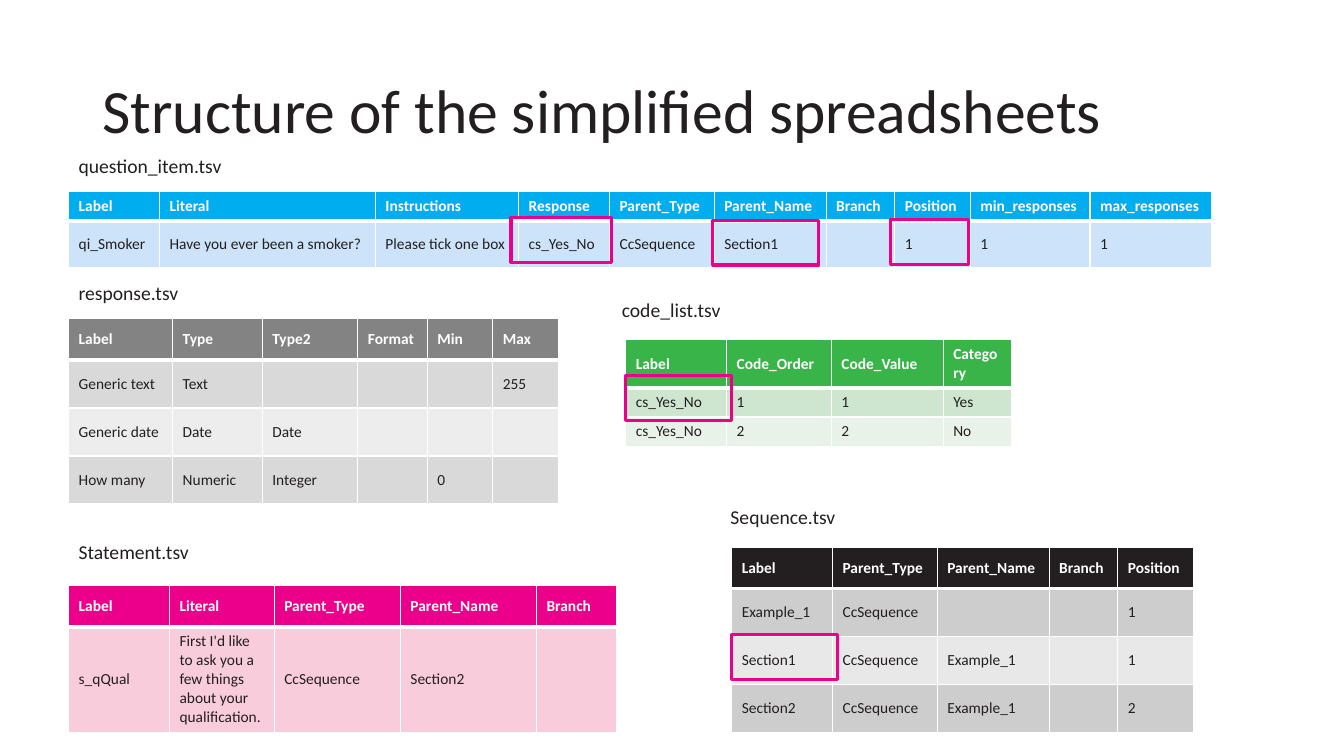
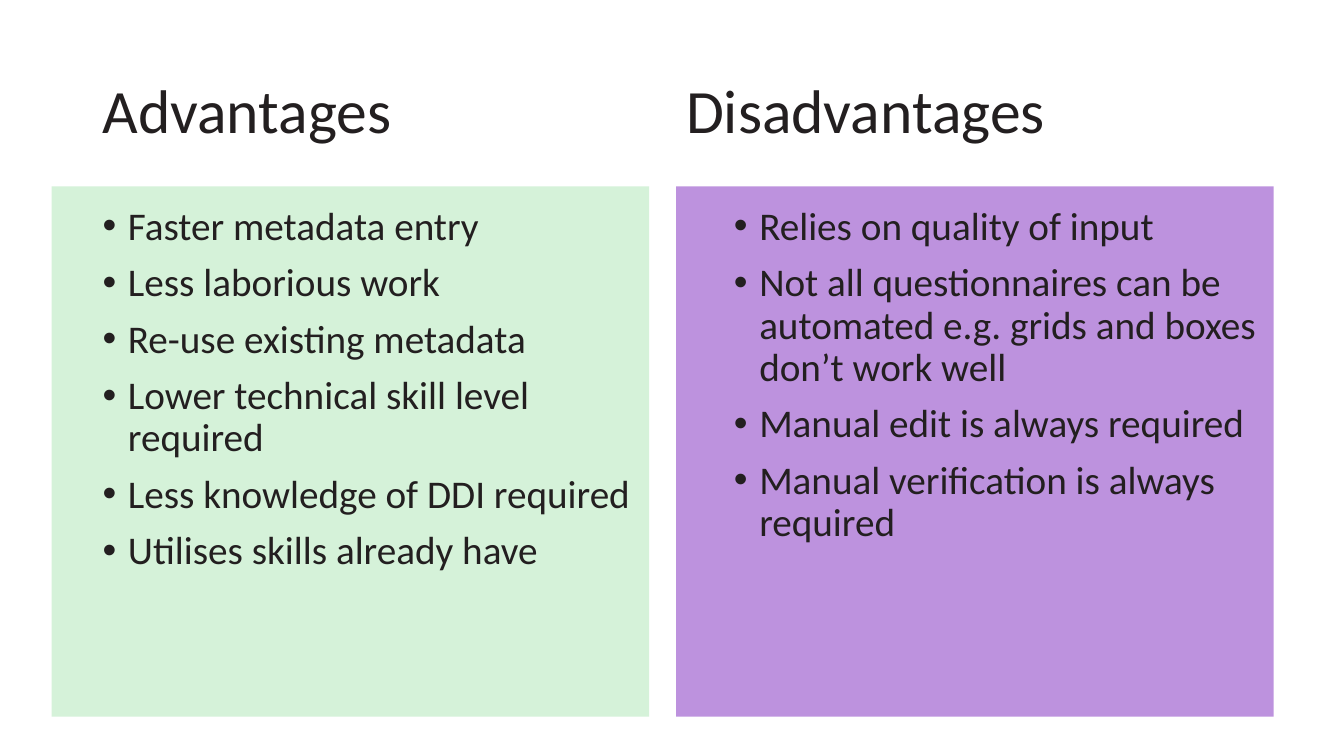
"""Build two slides on simplified metadata spreadsheets and their trade-offs."""
from lxml.etree import SubElement
from pptx import Presentation
from pptx.dml.color import RGBColor
from pptx.enum.shapes import MSO_SHAPE
from pptx.enum.text import MSO_ANCHOR, MSO_AUTO_SIZE, PP_ALIGN
from pptx.oxml import parse_xml
from pptx.oxml.ns import nsdecls, qn
from pptx.util import Cm, Pt

INK, WHITE, PINK = "231F20", "FFFFFF", "EC008B"
TITLE = dict(size=44, line=0.9, anchor=MSO_ANCHOR.MIDDLE)
BULLETS = dict(size=28, line=0.9, before=10, bullet="•", anchor=MSO_ANCHOR.TOP)


def rgb(color):
    return RGBColor.from_string(color)


def write(tf, text, size=14, color=INK, bold=False, line=None, before=0,
          bullet=None, anchor=None, wrap=True):
    tf.word_wrap = wrap
    tf.auto_size = MSO_AUTO_SIZE.NONE
    if anchor is not None:
        tf.vertical_anchor = anchor
    for i, row in enumerate(text.split("\n")):
        p = tf.add_paragraph() if i else tf.paragraphs[0]
        p.alignment = PP_ALIGN.LEFT
        if bullet:
            pPr = p._p.get_or_add_pPr()
            pPr.set("marL", str(Cm(0.64)))
            pPr.set("indent", str(-Cm(0.64)))
            SubElement(pPr, qn("a:buFont"), typeface="Arial")
            SubElement(pPr, qn("a:buChar"), char=bullet)
        p.space_before = Pt(before if i else 0)
        if line:
            p.line_spacing = line
        r = p.add_run()
        r.text = row
        r.font.name = "Calibri"
        r.font.size = Pt(size)
        r.font.bold = bold
        r.font.color.rgb = rgb(color)


prs = Presentation()
prs.slide_width, prs.slide_height = Cm(33.87), Cm(19.05)

s = prs.slides.add_slide(prs.slide_layouts[5])
sp = s.shapes.title
sp.left, sp.top, sp.width, sp.height = Cm(2.33), Cm(1.01), Cm(29.21), Cm(3.68)
write(sp.text_frame, "Structure of the simplified spreadsheets", **TITLE)

labels = [
    ("question_item.tsv", 1.73, 3.76, 4.17),
    ("response.tsv", 1.73, 6.96, 3.05),
    ("code_list.tsv", 15.42, 7.37, 3.02),
    ("Statement.tsv", 1.73, 13.49, 3.33),
    ("Sequence.tsv", 18.16, 12.6, 3.18),
]
for text, left, top, width in labels:
    sp = s.shapes.add_textbox(Cm(left), Cm(top), Cm(width), Cm(0.86))
    write(sp.text_frame, text, wrap=False)

tables = [
    (1.73, 4.83, [2.29, 5.44, 3.61, 2.29, 2.64, 2.82, 1.73, 1.9, 3.02, 3.07],
     [0.71, 1.19], ["00ADEF", "CCE3F9"],
     [["Label", "Literal", "Instructions", "Response", "Parent_Type",
       "Parent_Name", "Branch", "Position", "min_responses", "max_responses"],
      ["qi_Smoker", "Have you ever been a smoker?", "Please tick one box",
       "cs_Yes_No", "CcSequence", "Section1", "", "1", "1", "1"]]),
    (1.73, 8.03, [2.62, 2.26, 2.41, 1.75, 1.65, 1.65],
     [1.04, 1.21, 1.21, 1.21], ["838384", "D9D9D9", "EDEDED"],
     [["Label", "Type", "Type2", "Format", "Min", "Max"],
      ["Generic text", "Text", "", "", "", "255"],
      ["Generic date", "Date", "Date", "", "", ""],
      ["How many", "Numeric", "Integer", "", "0", ""]]),
    (15.77, 8.56, [2.54, 2.64, 2.82, 1.73],
     [1.17, 0.72, 0.72], ["38B449", "CEE5D0", "E8F2E9"],
     [["Label", "Code_Order", "Code_Value", "Category"],
      ["cs_Yes_No", "1", "1", "Yes"],
      ["cs_Yes_No", "2", "2", "No"]]),
    (1.73, 14.76, [2.54, 2.64, 3.18, 3.43, 2.03],
     [1.04, 2.64], [PINK, "F8CCDA"],
     [["Label", "Literal", "Parent_Type", "Parent_Name", "Branch"],
      ["s_qQual", "First I'd like to ask you a few things about your qualification.",
       "CcSequence", "Section2", ""]]),
    (18.44, 13.79, [2.54, 2.64, 2.82, 1.73, 1.9],
     [1.04, 1.21, 1.21, 1.21], [INK, "CDCDCD", "E8E8E8"],
     [["Label", "Parent_Type", "Parent_Name", "Branch", "Position"],
      ["Example_1", "CcSequence", "", "", "1"],
      ["Section1", "CcSequence", "Example_1", "", "1"],
      ["Section2", "CcSequence", "Example_1", "", "2"]]),
]
for left, top, widths, heights, (head, *bands), rows in tables:
    table = s.shapes.add_table(len(rows), len(widths), Cm(left), Cm(top),
                               Cm(sum(widths)), Cm(sum(heights))).table
    for column, width in zip(table.columns, widths):
        column.width = Cm(width)
    for i, (values, height) in enumerate(zip(rows, heights)):
        table.rows[i].height = Cm(height)
        for j, value in enumerate(values):
            cell = table.cell(i, j)
            cell.vertical_anchor = MSO_ANCHOR.MIDDLE
            cell.fill.solid()
            cell.fill.fore_color.rgb = rgb(bands[(i - 1) % len(bands)] if i else head)
            if value:
                write(cell.text_frame, value, size=11, bold=i == 0,
                      color=INK if i else WHITE)
            tcPr = cell._tc.get_or_add_tcPr()
            for k, side in enumerate("LRTB"):
                weight = 3 if (i, side) in [(0, "B"), (1, "T")] else 1
                tcPr.insert(k, parse_xml(
                    f'<a:ln{side} w="{Pt(weight)}" {nsdecls("a")}><a:solidFill>'
                    f'<a:srgbClr val="{WHITE}"/></a:solidFill></a:ln{side}>'))

highlights = [(15.77, 9.47, 2.67), (12.88, 5.49, 2.54), (17.96, 5.56, 2.67),
              (18.44, 16, 2.67), (22.45, 5.54, 1.96)]
for left, top, width in highlights:
    sp = s.shapes.add_shape(MSO_SHAPE.RECTANGLE, Cm(left), Cm(top), Cm(width), Cm(1.12))
    sp.shadow.inherit = False
    sp.fill.background()
    sp.line.color.rgb = rgb(PINK)
    sp.line.width = Pt(2.25)

s = prs.slides.add_slide(prs.slide_layouts[3])
for left, color in [(17.04, "BD92DE"), (1.3, "D5F2D9")]:
    sp = s.shapes.add_shape(MSO_SHAPE.RECTANGLE, Cm(left), Cm(4.7), Cm(15.06), Cm(13.36))
    sp.shadow.inherit = False
    sp.fill.solid()
    sp.fill.fore_color.rgb = rgb(color)
    sp.line.fill.background()
    s.shapes._spTree.insert(2, sp._element)

title, pros, cons = s.placeholders
heading = s.shapes.add_textbox(0, 0, 0, 0)
texts = [
    (title, 2.33, 1.01, 14.5, 3.68, TITLE, "Advantages"),
    (heading, 17.04, 1.01, 14.5, 3.68, TITLE, "Disadvantages"),
    (pros, 2.33, 5.08, 14.5, 12.09, BULLETS,
     "Faster metadata entry\nLess laborious work\nRe-use existing metadata\n"
     "Lower technical skill level required\nLess knowledge of DDI required\n"
     "Utilises skills already have"),
    (cons, 18.24, 5.08, 14.27, 12.09, BULLETS,
     "Relies on quality of input\n"
     "Not all questionnaires can be automated e.g. grids and boxes don’t work well\n"
     "Manual edit is always required\nManual verification is always required"),
]
for sp, left, top, width, height, style, text in texts:
    sp.left, sp.top, sp.width, sp.height = Cm(left), Cm(top), Cm(width), Cm(height)
    write(sp.text_frame, text, **style)

prs.save("out.pptx")
